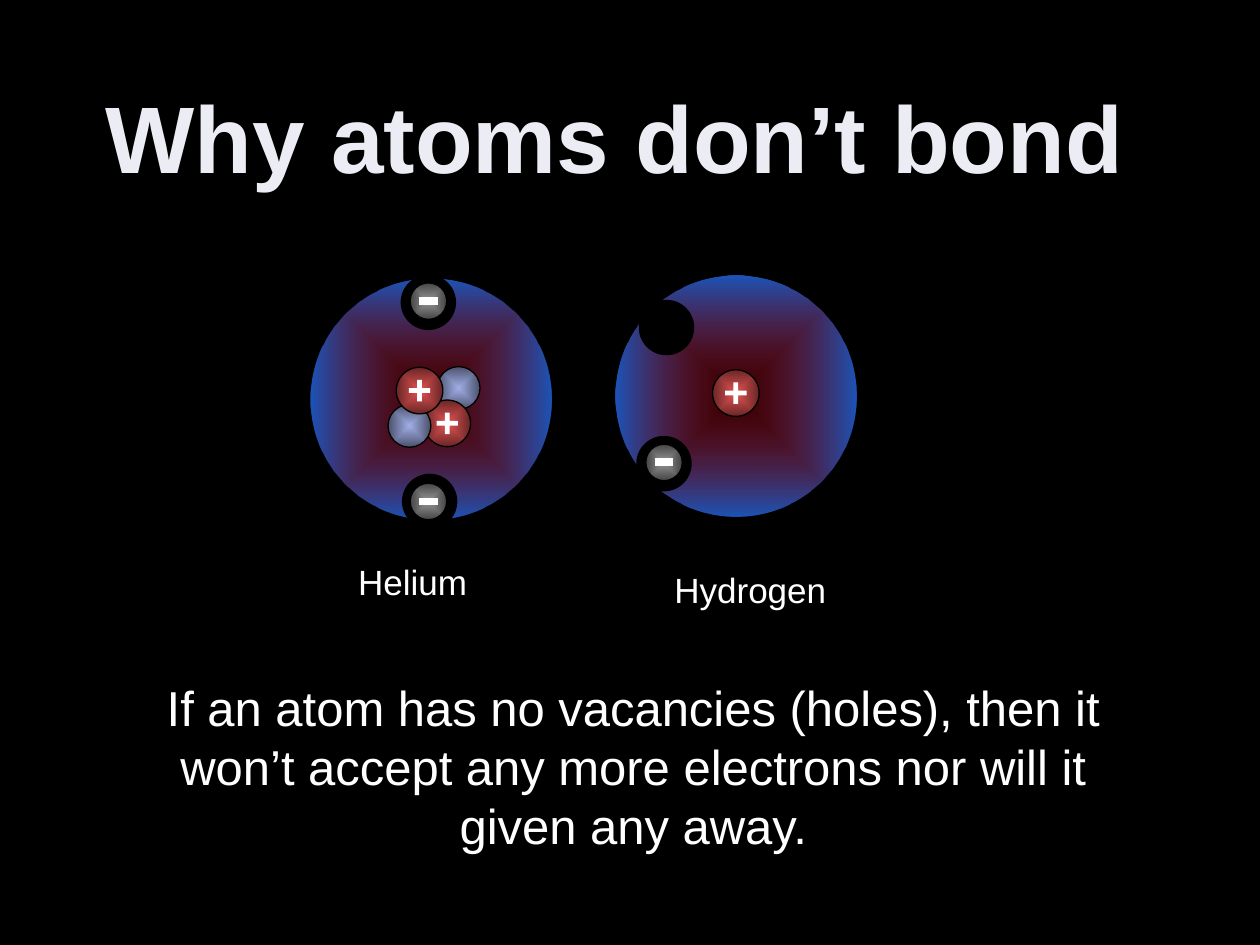
import pptx
import pptx.util
import pptx.dml.color
import pptx.enum.shapes
import pptx.enum.text
import pptx.oxml
import pptx.oxml.ns
from lxml import etree

Inches = pptx.util.Inches
Pt = pptx.util.Pt
SHAPES = pptx.enum.shapes.MSO_SHAPE

COLORS = {
    "background": "000000",
    "text": "FFFFFF",
    "title": "ECECF4",
    "title_outline": "020285",
    "shell": ("FF0000", "2368E3"),
    "neutron": ("A1AEE7", "4B516B"),
    "proton": ("E35353", "692626"),
    "electron": ("969696", "454545"),
}
SHELL_SIZE = 1.91
HOLE_SIZE = 0.44
NEUTRON_SIZE = 0.34
PROTON_SIZE = 0.37
ELECTRON_SIZE = 0.29
PLUS_SIZE = 0.17
MINUS_LENGTH = 0.15


def rgb(name):
    return pptx.dml.color.RGBColor.from_string(COLORS[name])


def set_radial_fill(shape, colors, opacities):
    stops = "".join(
        f'<a:gs pos="{position}"><a:srgbClr val="{color}">'
        f'<a:alpha val="{opacity * 1000}"/></a:srgbClr></a:gs>'
        for position, color, opacity in zip((0, 100000), colors, opacities)
    )
    gradient = pptx.oxml.parse_xml(
        f'<a:gradFill {pptx.oxml.ns.nsdecls("a")} rotWithShape="1"><a:gsLst>{stops}</a:gsLst>'
        '<a:path path="shape"><a:fillToRect l="50000" t="50000" r="50000" b="50000"/>'
        '</a:path></a:gradFill>'
    )
    shape.fill.solid()
    properties = shape._element.spPr
    properties.replace(properties.find(pptx.oxml.ns.qn("a:solidFill")), gradient)


def add_centered(shapes, kind, center_x, center_y, size):
    shape = shapes.add_shape(
        kind, Inches(center_x - size / 2), Inches(center_y - size / 2), Inches(size), Inches(size)
    )
    shape.shadow.inherit = False
    shape.line.fill.background()
    return shape


def add_ball(shapes, center_x, center_y, size, name):
    ball = add_centered(shapes, SHAPES.OVAL, center_x, center_y, size)
    set_radial_fill(ball, COLORS[name], (100, 100))
    ball.line.color.rgb = rgb("background")
    ball.line.width = Pt(0.75)


def add_shell(slide, center_x, center_y):
    shell = add_centered(slide.shapes, SHAPES.OVAL, center_x, center_y, SHELL_SIZE)
    set_radial_fill(shell, COLORS["shell"], (20, 81))


def add_hole(slide, center_x, center_y):
    hole = add_centered(slide.shapes, SHAPES.OVAL, center_x, center_y, HOLE_SIZE)
    hole.fill.solid()
    hole.fill.fore_color.rgb = rgb("background")


def add_neutron(slide, center_x, center_y):
    add_ball(slide.shapes, center_x, center_y, NEUTRON_SIZE, "neutron")


def add_proton(slide, center_x, center_y):
    group = slide.shapes.add_group_shape()
    add_ball(group.shapes, center_x, center_y, PROTON_SIZE, "proton")
    plus = add_centered(group.shapes, SHAPES.CROSS, center_x, center_y, PLUS_SIZE)
    plus.adjustments[0] = 0.39
    plus.fill.solid()
    plus.fill.fore_color.rgb = rgb("text")


def add_electron(slide, center_x, center_y):
    group = slide.shapes.add_group_shape()
    add_ball(group.shapes, center_x, center_y, ELECTRON_SIZE, "electron")
    minus = group.shapes.add_connector(
        pptx.enum.shapes.MSO_CONNECTOR.STRAIGHT,
        Inches(center_x - MINUS_LENGTH / 2), Inches(center_y),
        Inches(center_x + MINUS_LENGTH / 2), Inches(center_y),
    )
    minus.line.color.rgb = rgb("text")
    minus.line.width = Pt(4.5)
    etree.SubElement(minus._element.spPr, pptx.oxml.ns.qn("a:effectLst"))


def add_text(slide, text, left, top, width, height, size, color="text", wrap=True):
    box = slide.shapes.add_textbox(Inches(left), Inches(top), Inches(width), Inches(height))
    frame = box.text_frame
    frame.text = text
    frame.word_wrap = wrap
    frame.auto_size = pptx.enum.text.MSO_AUTO_SIZE.SHAPE_TO_FIT_TEXT
    paragraph = frame.paragraphs[0]
    paragraph.alignment = pptx.enum.text.PP_ALIGN.CENTER
    run = paragraph.runs[0]
    run.font.name = "Arial"
    run.font.size = Pt(size)
    run.font.color.rgb = rgb(color)
    return run


def add_title(slide, text):
    run = add_text(slide, text, 0.7, 0.58, 8.36, 1.01, 54, "title", wrap=False)
    run.font.bold = True
    outline = pptx.oxml.parse_xml(
        f'<a:ln {pptx.oxml.ns.nsdecls("a")} w="{Pt(2.48)}"><a:solidFill>'
        f'<a:srgbClr val="{COLORS["title_outline"]}"/></a:solidFill></a:ln>'
    )
    run.font._element.insert(0, outline)


def add_helium(slide):
    add_shell(slide, 3.42, 3.17)
    add_neutron(slide, 3.64, 3.08)
    for center_x, center_y in ((3.4, 2.4), (3.41, 3.98)):
        add_hole(slide, center_x, center_y)
    for center_y in (2.39, 3.98):
        add_electron(slide, 3.4, center_y)
    add_proton(slide, 3.55, 3.36)
    add_neutron(slide, 3.25, 3.38)
    add_proton(slide, 3.33, 3.1)
    add_text(slide, "Helium", 2.54, 4.4, 1.47, 0.44, 20)


def add_hydrogen(slide):
    add_shell(slide, 5.84, 3.14)
    add_hole(slide, 5.27, 3.68)
    add_hole(slide, 5.29, 2.6)
    add_electron(slide, 5.27, 3.67)
    add_proton(slide, 5.84, 3.12)
    add_text(slide, "Hydrogen", 5.22, 4.46, 1.47, 0.44, 20)


def main():
    presentation = pptx.Presentation()
    presentation.slide_width = Inches(10)
    presentation.slide_height = Inches(7.5)
    slide = presentation.slides.add_slide(presentation.slide_layouts[6])
    slide.background.fill.solid()
    slide.background.fill.fore_color.rgb = rgb("background")
    add_helium(slide)
    add_hydrogen(slide)
    add_title(slide, "Why atoms don’t bond")
    add_text(
        slide,
        "If an atom has no vacancies (holes), then it won’t accept any more electrons "
        "nor will it given any away.",
        1.1, 5.33, 7.85, 1.51, 28,
    )
    presentation.save("out.pptx")


if __name__ == "__main__":
    main()
